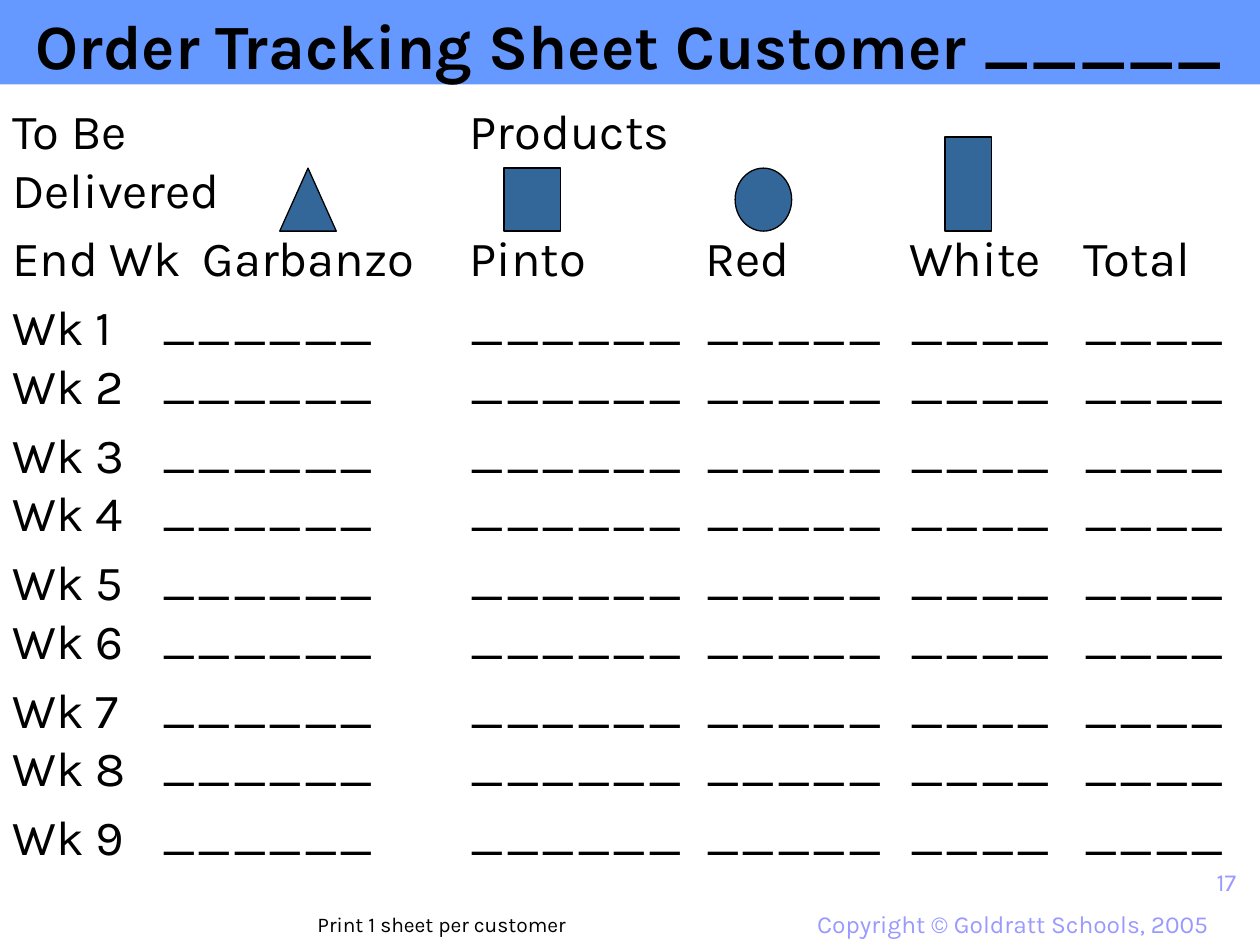
from lxml import etree
from pptx import Presentation
from pptx.dml.color import RGBColor
from pptx.enum.shapes import MSO_SHAPE as Shape
from pptx.enum.text import MSO_ANCHOR as Anchor, MSO_AUTO_SIZE as AutoSize, PP_ALIGN as Align
from pptx.oxml.ns import qn
from pptx.util import Cm, Pt

COLORS = {"banner": "6699FF", "bean": "336699", "ink": "000000", "footer": "9999FF"}
TAB_STOPS = {
    "products": [9.22],
    "header": [3.84, 9.22, 13.97, 18.08, 21.59],
    "weeks": [3, 9.22, 13.97, 18.08, 21.59],
}
BLANKS = "\t".join("_" * count for count in (6, 6, 5, 4, 4))


def color(name):
    return RGBColor.from_string(COLORS[name])


def style(paragraph, size, ink="ink", bold=False, align=Align.LEFT):
    paragraph.alignment = align
    paragraph.space_before = Pt(0)
    paragraph.font.color.rgb = color(ink)
    for name, value in {"name": "Karla", "size": Pt(size), "bold": bold}.items():
        setattr(paragraph.font, name, value)


deck = Presentation()
deck.slide_width, deck.slide_height = Cm(25.4), Cm(19.05)
page = deck.slides.add_slide(deck.slide_layouts[5])

title = page.shapes.title
title.left, title.top, title.width, title.height = Cm(0), Cm(0), Cm(25.4), Cm(1.7)
title.fill.solid()
title.fill.fore_color.rgb = color("banner")
title.text_frame.text = "Order Tracking Sheet Customer _____"
title.text_frame.auto_size = AutoSize.NONE
title.text_frame.vertical_anchor = Anchor.TOP
style(title.text_frame.paragraphs[0], 36, bold=True, align=Align.CENTER)

rows = [
    ("products", "To Be\tProducts\vDelivered"),
    ("header", "End Wk\tGarbanzo\tPinto\tRed\tWhite\tTotal"),
]
for first in range(1, 10, 2):
    weeks = range(first, min(first + 2, 10))
    rows.append(("weeks", "\v".join(f"Wk {week}\t{BLANKS}" for week in weeks)))

sheet = page.shapes.add_textbox(Cm(0), Cm(1.9), Cm(25.4), Cm(15.04))
frame = sheet.text_frame
frame.word_wrap = True
for index, (kind, text) in enumerate(rows):
    paragraph = frame.add_paragraph() if index else frame.paragraphs[0]
    paragraph.text = text
    tabs = etree.SubElement(paragraph._p.get_or_add_pPr(), qn("a:tabLst"))
    for stop in TAB_STOPS[kind]:
        etree.SubElement(tabs, qn("a:tab"), pos=str(Cm(stop)), algn="l")
    style(paragraph, 28)
    if index:
        paragraph.space_before = Pt(5.6)

beans_bottom = 4.66
beans = [
    (Shape.ISOSCELES_TRIANGLE, 5.64, 1.14, 1.27),
    (Shape.RECTANGLE, 10.16, 1.14, 1.27),
    (Shape.OVAL, 14.82, 1.14, 1.27),
    (Shape.RECTANGLE, 19.05, 0.94, 1.9),
]
for kind, left, width, height in beans:
    bean = page.shapes.add_shape(kind, Cm(left), Cm(beans_bottom - height), Cm(width), Cm(height))
    bean.shadow.inherit = False
    bean.fill.solid()
    bean.fill.fore_color.rgb = color("bean")
    bean.line.color.rgb = color("ink")
    bean.line.width = Pt(0.75)

captions = [
    ("Copyright © Goldratt Schools, 2005", 15.44, 18.21, 9.96, 0.84, 14, "footer", Align.CENTER),
    ("17", 19.89, 17.35, 5.28, 1.27, 14, "footer", Align.RIGHT),
    ("Print 1 sheet per customer", 6.15, 18.26, 6.78, 0.76, 12, "ink", Align.LEFT),
]
for text, left, top, width, height, size, ink, align in captions:
    box = page.shapes.add_textbox(Cm(left), Cm(top), Cm(width), Cm(height))
    box.text_frame.word_wrap = True
    box.text_frame.text = text
    style(box.text_frame.paragraphs[0], size, ink, align=align)

deck.save("out.pptx")
